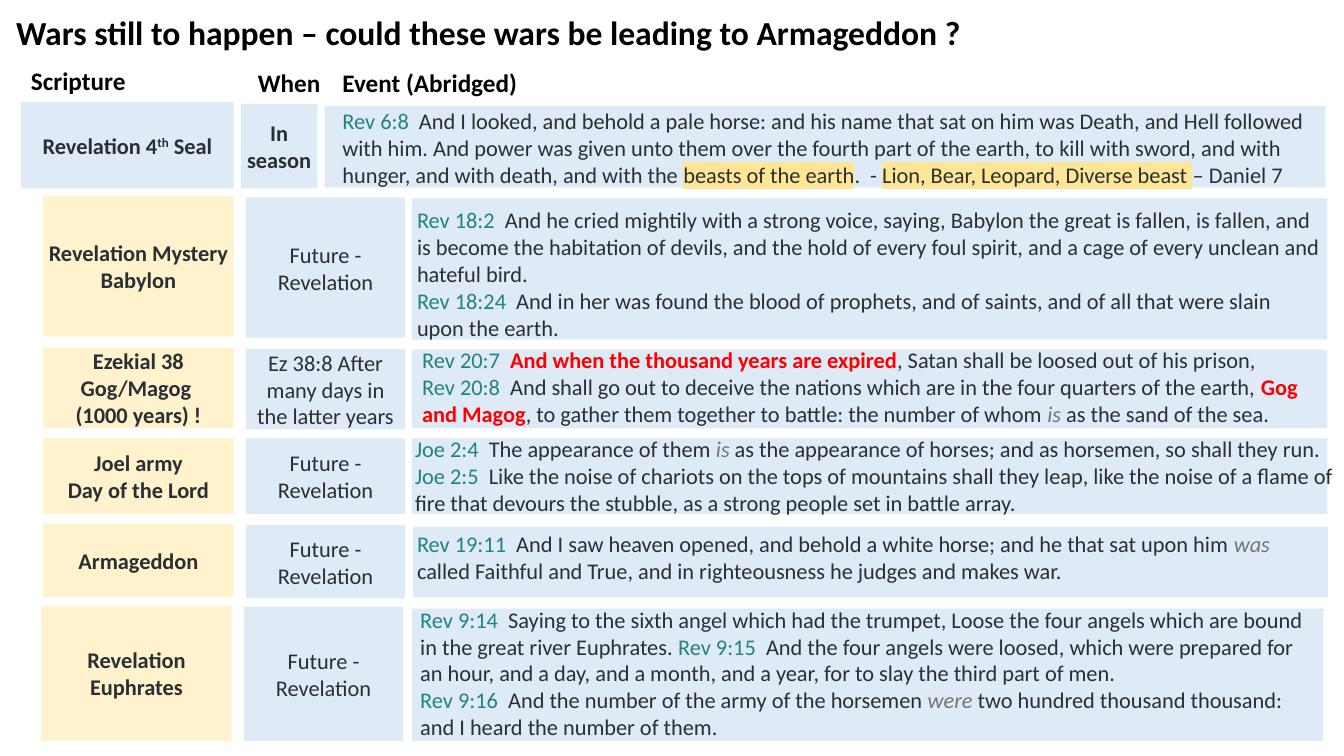
from lxml import etree
from pptx import Presentation
from pptx.dml.color import RGBColor
from pptx.enum.shapes import MSO_SHAPE
from pptx.enum.text import MSO_ANCHOR, MSO_AUTO_SIZE, PP_ALIGN
from pptx.oxml.ns import qn
from pptx.util import Cm, Pt

RECTANGLE = MSO_SHAPE.RECTANGLE
TOP, MIDDLE = MSO_ANCHOR.TOP, MSO_ANCHOR.MIDDLE
CENTER = PP_ALIGN.CENTER
NO_FIT = MSO_AUTO_SIZE.NONE
TITLE_ONLY = 5
FONT = "Calibri"

COLORS = {
    "blue": "DEEBF7",
    "yellow": "FFF2CC",
    "highlight": "FFE697",
    "black": "000000",
    "text": "292F33",
    "reference": "218282",
    "alert": "FF0000",
    "added": "757575",
}

# style: (colour, bold, italic)
STYLES = {
    "heading": ("black", True, False),
    "label": ("text", True, False),
    "super": ("text", True, False),
    "plain": ("text", False, False),
    "marked": ("text", False, False),
    "ref": ("reference", False, False),
    "alert": ("alert", True, False),
    "added": ("added", False, True),
}

TITLE = "Wars still to happen – could these wars be leading to Armageddon ?"

# text, box (left, top, width, height in cm)
HEADINGS = [
    ("Scripture", (0.53, 1.52, 3.23, 1.02)),
    ("When", (6.25, 1.57, 2.36, 1.02)),
    ("Event (Abridged)", (8.38, 1.57, 5.74, 1.02)),
]

FUTURE = [[("plain", "Future - Revelation")]]

# Each war: scripture fill, then (box, paragraphs) of scripture and of when,
# the event band, and (box, paragraphs) of the verses.
WARS = [
    ("blue",
     ((0.53, 2.57, 5.36, 2.18),
      [[("label", "Revelation 4"), ("super", "th"), ("label", " Seal")]]),
     ((6.07, 2.62, 1.93, 2.13), [[("label", "In season")]]),
     (8.18, 2.67, 25.22, 2.06),
     ((8.38, 2.57, 25.22, 2.31), [
         [("ref", "Rev 6:8"),
          ("plain", "  And I looked, and behold a pale horse: and his name that sat on "
                    "him was Death, and Hell followed with him. And power was given unto "
                    "them over the fourth part of the earth, to kill with sword, and with "
                    "hunger, and with death, and with the "),
          ("marked", "beasts of the earth"), ("plain", ".  - "),
          ("marked", "Lion, Bear, Leopard, Diverse beast "), ("plain", "– Daniel 7")],
     ])),
    ("yellow",
     ((1.09, 4.95, 4.8, 3.53), [[("label", "Revelation Mystery Babylon")]]),
     ((6.2, 4.98, 4.01, 3.53), FUTURE),
     (10.39, 5, 23.06, 3.56),
     ((10.26, 5.08, 23.34, 4.37), [
         [("ref", "Rev 18:2"),
          ("plain", "  And he cried mightily with a strong voice, saying, Babylon the "
                    "great is fallen, is fallen, and is become the habitation of devils, "
                    "and the hold of every foul spirit, and a cage of every unclean and "
                    "hateful bird. ")],
         [("ref", "Rev 18:24"),
          ("plain", "  And in her was found the blood of prophets, and of saints, and of "
                    "all that were slain upon the earth. ")],
     ])),
    ("yellow",
     ((1.09, 8.76, 4.8, 2.03),
      [[("label", "Ezekial 38")], [("label", "Gog/Magog ")], [("label", "(1000 years) !")]]),
     ((6.2, 8.79, 4.01, 2.03),
      [[("plain", "Ez 38:8 After many days in the latter years")]]),
     (10.39, 8.81, 23.06, 1.98),
     ((10.39, 8.61, 23.34, 2.31), [
         [("ref", "Rev 20:7  "), ("alert", "And when the thousand years are expired"),
          ("plain", ", Satan shall be loosed out of his prison, ")],
         [("ref", "Rev 20:8"),
          ("plain", "  And shall go out to deceive the nations which are in the four "
                    "quarters of the earth, "),
          ("alert", "Gog and Magog"),
          ("plain", ", to gather them together to battle: the number of whom "),
          ("added", "is"), ("plain", " as the sand of the sea. ")],
     ])),
    ("yellow",
     ((1.09, 11.05, 4.8, 1.9), [[("label", "Joel army")], [("label", "Day of the Lord")]]),
     ((6.2, 11.05, 4.01, 1.9), FUTURE),
     (10.39, 11.05, 23.06, 1.9),
     ((10.21, 10.85, 23.72, 2.31), [
         [("ref", "Joe 2:4"), ("plain", "  The appearance of them "), ("added", "is"),
          ("plain", " as the appearance of horses; and as horsemen, so shall they run. ")],
         [("ref", "Joe 2:5"),
          ("plain", "  Like the noise of chariots on the tops of mountains shall they "
                    "leap, like the noise of a flame of fire that devours the stubble, as "
                    "a strong people set in battle array. ")],
     ])),
    ("yellow",
     ((1.09, 13.21, 4.8, 1.83), [[("label", "Armageddon")]]),
     ((6.2, 13.23, 4.01, 1.85), FUTURE),
     (10.41, 13.28, 23.06, 1.78),
     ((10.26, 13.23, 23.06, 1.63), [
         [("ref", "Rev 19:11"),
          ("plain", "  And I saw heaven opened, and behold a white horse; and he that sat "
                    "upon him "),
          ("added", "was"),
          ("plain", " called Faithful and True, and in righteousness he judges and makes "
                    "war. ")],
     ])),
    ("yellow",
     ((1.04, 15.27, 4.8, 3.4), [[("label", "Revelation Euphrates")]]),
     ((6.15, 15.29, 4.01, 3.38), FUTURE),
     (10.39, 15.34, 22.96, 3.33),
     ((10.34, 15.14, 23.14, 3.68), [
         [("ref", "Rev 9:14"),
          ("plain", "  Saying to the sixth angel which had the trumpet, Loose the four "
                    "angels which are bound in the great river Euphrates. "),
          ("ref", "Rev 9:15"),
          ("plain", "  And the four angels were loosed, which were prepared for an hour, "
                    "and a day, and a month, and a year, for to slay the third part of "
                    "men. ")],
         [("ref", "Rev 9:16"),
          ("plain", "  And the number of the army of the horsemen "), ("added", "were"),
          ("plain", " two hundred thousand thousand: and I heard the number of them. ")],
     ])),
]


def rgb(name):
    return RGBColor.from_string(COLORS[name])


def format_span(span, style, size):
    color, bold, italic = STYLES[style]
    font = span.font
    font.name, font.size, font.bold, font.italic = FONT, Pt(size), bold, italic
    font.color.rgb = rgb(color)
    properties = span._r.get_or_add_rPr()
    if style == "super":
        properties.set("baseline", "30000")
    if style == "marked":
        highlight = etree.Element(qn("a:highlight"))
        etree.SubElement(highlight, qn("a:srgbClr"), val=COLORS["highlight"])
        properties.find(qn("a:solidFill")).addnext(highlight)


def write(frame, paragraphs, size=16, align=None):
    """Fill a text frame with paragraphs, each a list of (style, text)."""
    frame.word_wrap = True
    for index, spans in enumerate(paragraphs):
        para = frame.add_paragraph() if index else frame.paragraphs[0]
        para.alignment = align
        for style, text in spans:
            span = para.add_run()
            span.text = text
            format_span(span, style, size)


def add_title(page):
    title = page.shapes.title
    title.left, title.top, title.width, title.height = Cm(0.15), Cm(0.28), Cm(32.72), Cm(0.99)
    frame = title.text_frame
    write(frame, [[("heading", TITLE)]], 24, PP_ALIGN.LEFT)
    frame.auto_size = NO_FIT
    frame.vertical_anchor = TOP
    frame.paragraphs[0].line_spacing = 0.9


def add_block(page, box, fill, paragraphs=()):
    block = page.shapes.add_shape(RECTANGLE, *map(Cm, box))
    block.shadow.inherit = False
    block.fill.solid()
    block.fill.fore_color.rgb = rgb(fill)
    block.line.fill.background()
    frame = block.text_frame
    frame.margin_left = frame.margin_right = Cm(0.1)
    frame.margin_top = frame.margin_bottom = 0
    frame.vertical_anchor = MIDDLE
    write(frame, paragraphs, align=CENTER)


def add_text(page, box, paragraphs, size=16):
    write(page.shapes.add_textbox(*map(Cm, box)).text_frame, paragraphs, size)


def main():
    deck = Presentation()
    deck.slide_width, deck.slide_height = Cm(33.87), Cm(19.05)
    page = deck.slides.add_slide(deck.slide_layouts[TITLE_ONLY])
    add_title(page)
    for text, box in HEADINGS:
        add_text(page, box, [[("heading", text)]], 18)
    for fill, (scripture_box, scripture), (when_box, when), band, (verse_box, verses) in WARS:
        add_block(page, scripture_box, fill, scripture)
        add_block(page, when_box, "blue", when)
        add_block(page, band, "blue")
        add_text(page, verse_box, verses)
    deck.save("out.pptx")


if __name__ == "__main__":
    main()
